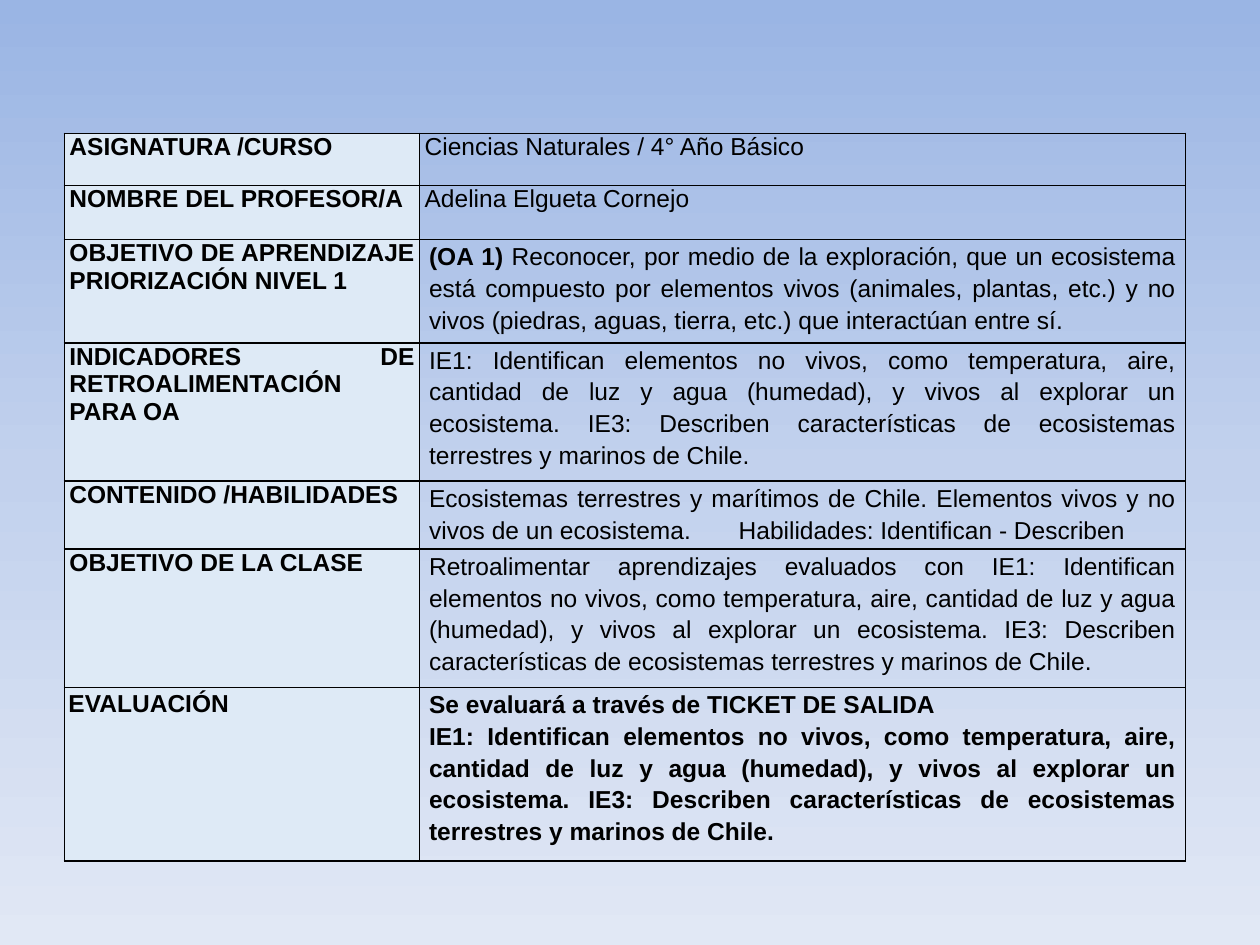
from copy import deepcopy

from pptx import Presentation
from pptx.dml.color import RGBColor
from pptx.enum.text import PP_ALIGN
from pptx.oxml.ns import qn
from pptx.util import Cm, Pt
from lxml.etree import SubElement

COLORS = {
    "top": "9AB5E4",
    "middle": "C2D1ED",
    "bottom": "E1E8F5",
    "label": "DEEAF6",
    "ink": "000000",
}
FONT = "Arial"
INDICATORS = (
    "IE1: Identifican elementos no vivos, como temperatura, aire, cantidad de luz y agua "
    "(humedad), y vivos al explorar un ecosistema. IE3: Describen características de "
    "ecosistemas terrestres y marinos de Chile."
)

# Each row: height in cm, label, paragraphs; a paragraph is a list of (text, bold)
ROWS = [
    (1.05, "ASIGNATURA /CURSO", [[("Ciencias Naturales / 4° Año Básico", False)]]),
    (1.09, "NOMBRE DEL PROFESOR/A", [[("Adelina Elgueta Cornejo", False)]]),
    (2.08, "OBJETIVO DE APRENDIZAJE PRIORIZACIÓN NIVEL 1", [[
        ("(OA 1) ", True),
        ("Reconocer, por medio de la exploración, que un ecosistema está compuesto por "
         "elementos vivos (animales, plantas, etc.) y no vivos (piedras, aguas, tierra, "
         "etc.) que interactúan entre sí.", False)]]),
    (2.79, "INDICADORES DE RETROALIMENTACIÓN PARA OA", [[(INDICATORS, False)]]),
    (1.37, "CONTENIDO /HABILIDADES", [[
        ("Ecosistemas terrestres y marítimos de Chile. Elementos vivos y no vivos de un "
         "ecosistema.\tHabilidades: Identifican - Describen", False)]]),
    (2.79, "OBJETIVO DE LA CLASE", [[
        ("Retroalimentar aprendizajes evaluados con " + INDICATORS, False)]]),
    (3.5, "EVALUACIÓN", [
        [("Se evaluará a través de TICKET DE SALIDA", True)],
        [(INDICATORS, True)]]),
]
COLUMN_WIDTHS = (7.16, 15.44)
SHORT_ROWS = 2  # the first rows hold one plain line each
SKILLS_TAB = 6.24


def color(name):
    return RGBColor.from_string(COLORS[name])


def paint_background(slide):
    fill = slide.background.fill
    fill.gradient()
    fill.gradient_angle = 270
    first = next(slide.element.iter(qn("a:gs")))
    first.addnext(deepcopy(first))
    names = ("top", "middle", "bottom")
    for stop, name, position in zip(fill.gradient_stops, names, (0, 0.5, 1)):
        stop.color.rgb = color(name)
        stop.position = position


def add_borders(cell):
    properties = cell._tc.get_or_add_tcPr()
    for index, side in enumerate(("a:lnL", "a:lnR", "a:lnT", "a:lnB")):
        line = properties.makeelement(qn(side), {"w": str(Pt(1))})
        solid = SubElement(line, qn("a:solidFill"))
        SubElement(solid, qn("a:srgbClr"), val=COLORS["ink"])
        properties.insert(index, line)


def add_tab_stop(paragraph, position):
    tabs = SubElement(paragraph._p.get_or_add_pPr(), qn("a:tabLst"))
    SubElement(tabs, qn("a:tab"), pos=str(Cm(position)), algn="l")


def fill_cell(cell, paragraphs, side_margin, top_margin, spacing):
    cell.margin_left = cell.margin_right = Cm(side_margin)
    cell.margin_top = cell.margin_bottom = Cm(top_margin)
    frame = cell.text_frame
    for index, parts in enumerate(paragraphs):
        paragraph = frame.add_paragraph() if index else frame.paragraphs[0]
        paragraph.alignment = PP_ALIGN.JUSTIFY
        if spacing:
            paragraph.line_spacing = spacing
        for text, bold in parts:
            run = paragraph.add_run()
            run.text = text
            run.font.name = FONT
            run.font.size = Pt(14)
            run.font.bold = bold
            run.font.color.rgb = color("ink")
            if "\t" in text:
                add_tab_stop(paragraph, SKILLS_TAB)
    add_borders(cell)


def add_lesson_table(slide):
    heights = [row[0] for row in ROWS]
    table = slide.shapes.add_table(
        len(ROWS), len(COLUMN_WIDTHS), Cm(1.3), Cm(2.69),
        Cm(sum(COLUMN_WIDTHS)), Cm(sum(heights))).table
    table.first_row = table.horz_banding = False
    for column, width in zip(table.columns, COLUMN_WIDTHS):
        column.width = Cm(width)

    for index, (height, label, paragraphs) in enumerate(ROWS):
        table.rows[index].height = Cm(height)
        label_cell, content_cell = table.rows[index].cells
        label_cell.fill.solid()
        label_cell.fill.fore_color.rgb = color("label")
        content_cell.fill.background()
        is_last = index == len(ROWS) - 1
        label_margins = (0.08, 0.05) if is_last else (0.1, 0)
        fill_cell(label_cell, [[(label, True)]], *label_margins, None)
        is_short = index < SHORT_ROWS
        fill_cell(content_cell, paragraphs, 0.1 if is_short else 0.19, 0,
                  None if is_short else 1.15)


def main():
    presentation = Presentation()
    presentation.slide_width = Cm(25.4)
    presentation.slide_height = Cm(19.05)
    slide = presentation.slides.add_slide(presentation.slide_layouts[6])
    paint_background(slide)
    add_lesson_table(slide)
    presentation.save("out.pptx")


if __name__ == "__main__":
    main()
